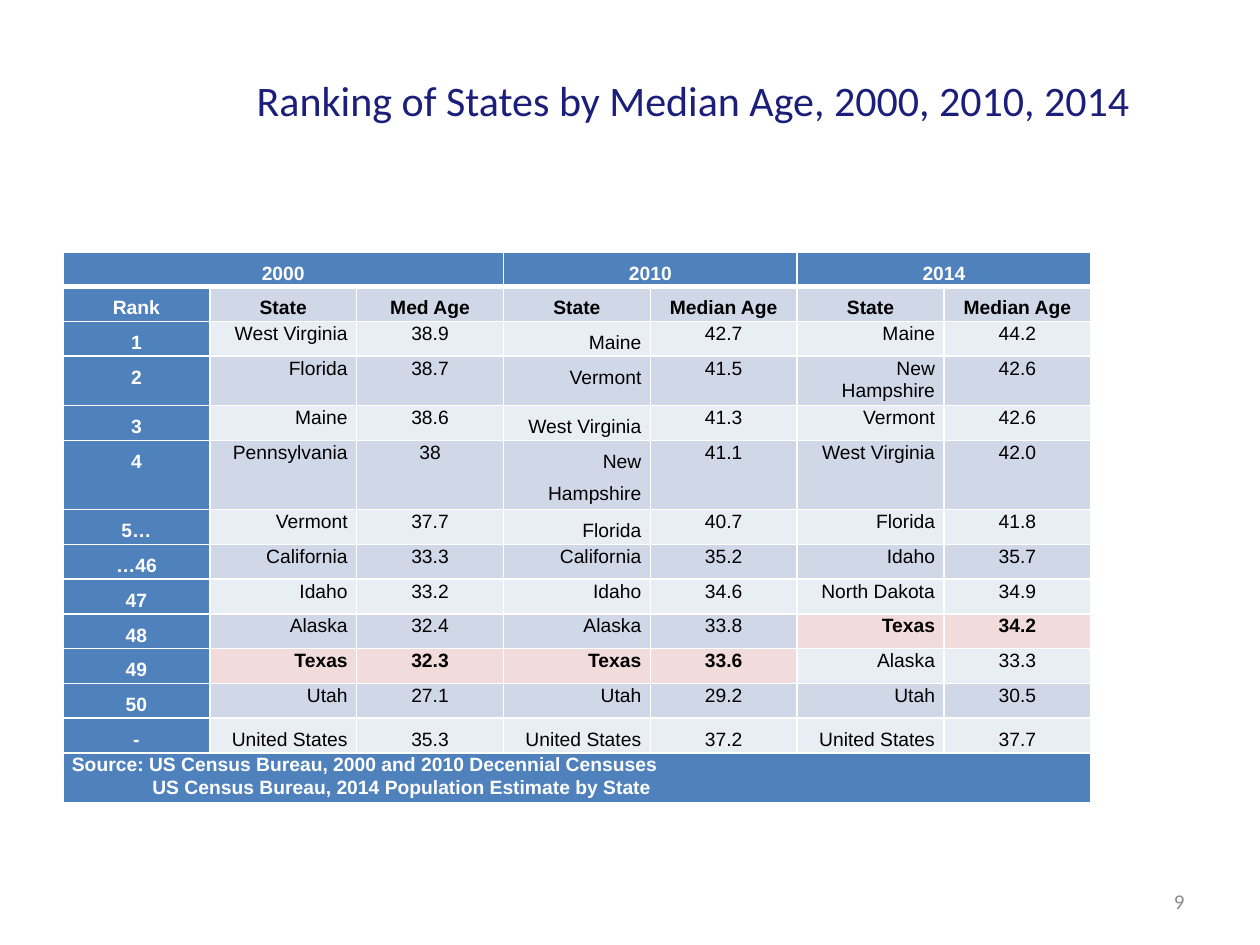
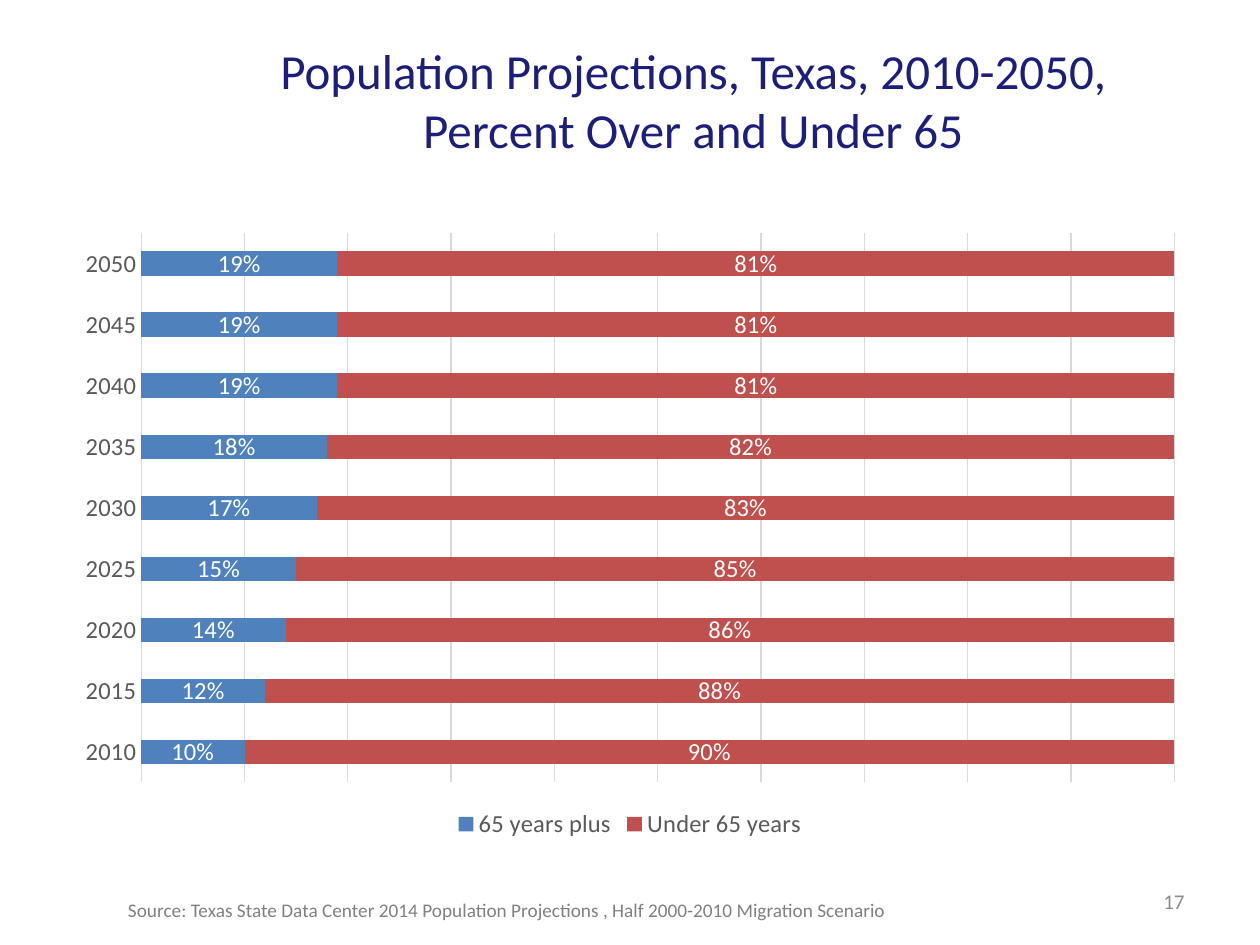
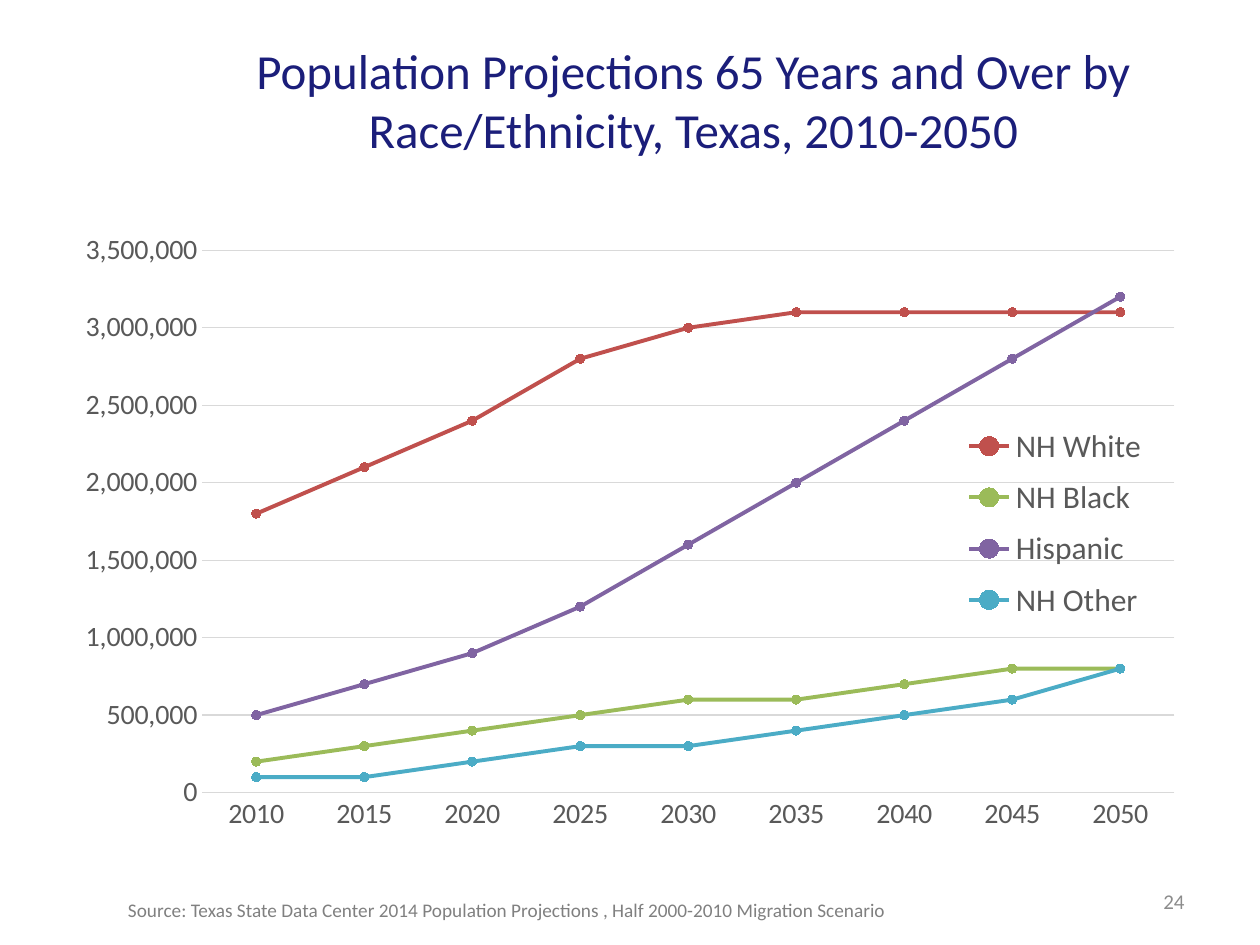
from dataclasses import dataclass

from pptx import Presentation
from pptx.chart.data import CategoryChartData
from pptx.dml.color import RGBColor
from pptx.enum.chart import (XL_CHART_TYPE, XL_LEGEND_POSITION, XL_MARKER_STYLE,
                             XL_TICK_MARK)
from pptx.enum.text import MSO_ANCHOR, PP_ALIGN
from pptx.oxml import parse_xml
from pptx.oxml.ns import nsdecls, qn
from pptx.util import Cm, Pt


@dataclass(frozen=True)
class Theme:
    heading_font: str = "Calibri"
    table_font: str = "Arial"
    title: str = "1B1E7A"
    page_number: str = "8C8C8C"
    source: str = "808080"
    axis_text: str = "595959"
    grid: str = "D9D9D9"
    white: str = "FFFFFF"
    black: str = "000000"
    blue: str = "4F81BD"
    red: str = "C0504D"
    green: str = "9BBB59"
    purple: str = "8064A2"
    aqua: str = "4BACC6"
    band_dark: str = "D0D8E8"
    band_light: str = "E9EDF4"
    texas: str = "F2DCDB"
    title_size: int = 28
    table_title_size: int = 24
    number_size: int = 12
    small_size: int = 11
    bar_size: int = 14
    line_size: int = 16
    legend_size: int = 18


theme = Theme()


def style_font(font, size, color, name=theme.heading_font, bold=False):
    font.name = name
    font.size = Pt(size)
    font.bold = bold
    font.color.rgb = RGBColor.from_string(color)


def add_text(slide, text, box, size, color, align=PP_ALIGN.LEFT, anchor=MSO_ANCHOR.TOP):
    """Add a one-paragraph text box; box is left, top, width, height in cm."""
    text_frame = slide.shapes.add_textbox(*map(Cm, box)).text_frame
    text_frame.word_wrap = True
    text_frame.vertical_anchor = anchor
    text_frame.text = text
    paragraph = text_frame.paragraphs[0]
    paragraph.alignment = align
    for run in paragraph.runs:
        style_font(run.font, size, color)


presentation = Presentation()
presentation.slide_width = Cm(25.4)
presentation.slide_height = Cm(19.05)

# Titles, page numbers and sources
projection_source = ("Source: Texas State Data Center 2014 Population Projections , "
                     "Half 2000-2010 Migration Scenario")
pages = [
    ("Ranking of States by Median Age, 2000, 2010, 2014", theme.table_title_size, "9", None),
    ("Population Projections, Texas, 2010-2050,\vPercent Over and Under 65",
     theme.title_size, "17", projection_source),
    ("Population Projections 65 Years and Over by Race/Ethnicity, Texas, 2010-2050",
     theme.title_size, "24", projection_source),
]
slides = []
for title, title_size, number, source in pages:
    slide = presentation.slides.add_slide(presentation.slide_layouts[6])
    add_text(slide, title, (4.45, 0.64, 19.05, 2.74), title_size, theme.title,
             PP_ALIGN.CENTER, MSO_ANCHOR.MIDDLE)
    add_text(slide, number, (18.2, 17.66, 5.93, 1.01), theme.number_size,
             theme.page_number, PP_ALIGN.RIGHT, MSO_ANCHOR.MIDDLE)
    if source:
        add_text(slide, source, (2.33, 17.99, 22, 0.73), theme.small_size, theme.source)
    slides.append(slide)
ranking_slide, share_slide, ethnicity_slide = slides

# Ranking table
ranking = [
    ("2000", "", "", "2010", "", "2014", ""),
    ("Rank", "State", "Med Age", "State", "Median Age", "State", "Median Age"),
    ("1", "West Virginia", "38.9", "Maine", "42.7", "Maine", "44.2"),
    ("2", "Florida", "38.7", "Vermont", "41.5", "New Hampshire", "42.6"),
    ("3", "Maine", "38.6", "West Virginia", "41.3", "Vermont", "42.6"),
    ("4", "Pennsylvania", "38", "New Hampshire", "41.1", "West Virginia", "42.0"),
    ("5…", "Vermont", "37.7", "Florida", "40.7", "Florida", "41.8"),
    ("…46", "California", "33.3", "California", "35.2", "Idaho", "35.7"),
    ("47", "Idaho", "33.2", "Idaho", "34.6", "North Dakota", "34.9"),
    ("48", "Alaska", "32.4", "Alaska", "33.8", "Texas", "34.2"),
    ("49", "Texas", "32.3", "Texas", "33.6", "Alaska", "33.3"),
    ("50", "Utah", "27.1", "Utah", "29.2", "Utah", "30.5"),
    ("-", "United States", "35.3", "United States", "37.2", "United States", "37.7"),
    ("Source: US Census Bureau, 2000 and 2010 Decennial Censuses\n"
     "US Census Bureau, 2014 Population Estimate by State", "", "", "", "", "", ""),
]
source_row = len(ranking) - 1
us_row = source_row - 1
tall_rows = {3: 0.95, 5: 1.29, source_row: 0.95}
table = ranking_slide.shapes.add_table(
    len(ranking), 7, Cm(1.27), Cm(5.08), Cm(20.75), Cm(10.44)).table
table.first_row = False
table.horz_banding = False
for column in table.columns:
    column.width = Cm(2.96)
for row_index, row in enumerate(table.rows):
    row.height = Cm(tall_rows.get(row_index, 0.67))
for row_index, first, last in [(0, 0, 2), (0, 3, 4), (0, 5, 6), (source_row, 0, 6)]:
    table.cell(row_index, first).merge(table.cell(row_index, last))

for row_index, values in enumerate(ranking):
    for column_index, value in enumerate(values):
        cell = table.cell(row_index, column_index)
        cell.margin_left = cell.margin_right = Cm(0.18)
        cell.margin_top = cell.margin_bottom = 0
        thick_side = {0: "lnB", 1: "lnT"}.get(row_index)
        for side in ("lnL", "lnR", "lnT", "lnB"):
            width = Pt(3 if side == thick_side else 1)
            cell._tc.get_or_add_tcPr().append(parse_xml(
                f'<a:{side} {nsdecls("a")} w="{width}"><a:solidFill>'
                f'<a:srgbClr val="{theme.white}"/></a:solidFill></a:{side}>'))

        is_blue = row_index in (0, source_row) or column_index == 0
        is_state = column_index % 2 == 1
        is_texas = not is_blue and "Texas" in (value, values[column_index - 1])
        if is_blue:
            fill = theme.blue
        elif is_texas:
            fill = theme.texas
        else:
            fill = theme.band_dark if row_index % 2 else theme.band_light
        cell.fill.solid()
        cell.fill.fore_color.rgb = RGBColor.from_string(fill)
        if not value:
            continue

        is_loose = (row_index in (0, 1, us_row) or column_index == 0
                    or (column_index == 3 and row_index <= 6))
        cell.text_frame.text = value
        for paragraph in cell.text_frame.paragraphs:
            paragraph.line_spacing = 1.5 if is_loose and row_index != source_row else 1.07
            if row_index == source_row:
                paragraph.alignment = PP_ALIGN.LEFT
            elif is_state and row_index > 1:
                paragraph.alignment = PP_ALIGN.RIGHT
            else:
                paragraph.alignment = PP_ALIGN.CENTER
            style_font(paragraph.runs[0].font, theme.small_size,
                       theme.white if is_blue else theme.black, theme.table_font,
                       is_blue or is_texas or row_index == 1)
second_source = table.cell(source_row, 0).text_frame.paragraphs[1]
second_source._p.get_or_add_pPr().set("marL", str(Cm(1.62)))

# Projection charts
years = [str(year) for year in range(2010, 2051, 5)]
over_65 = [0.1, 0.12, 0.14, 0.15, 0.17, 0.18, 0.19, 0.19, 0.19]
age_series = [
    ("65 years plus", over_65[::-1], theme.blue),
    ("Under 65 years", [round(1 - share, 2) for share in reversed(over_65)], theme.red),
]
ethnicity_series = [
    ("NH White", [1800000, 2100000, 2400000, 2800000, 3000000, 3100000, 3100000, 3100000,
                  3100000], theme.red),
    ("NH Black", [200000, 300000, 400000, 500000, 600000, 600000, 700000, 800000, 800000],
     theme.green),
    ("Hispanic", [500000, 700000, 900000, 1200000, 1600000, 2000000, 2400000, 2800000,
                  3200000], theme.purple),
    ("NH Other", [100000, 100000, 200000, 300000, 300000, 400000, 500000, 600000, 800000],
     theme.aqua),
]
charts = []
for slide, chart_type, categories, series_list, size in [
    (share_slide, XL_CHART_TYPE.BAR_STACKED_100, years[::-1], age_series, theme.bar_size),
    (ethnicity_slide, XL_CHART_TYPE.LINE_MARKERS, years, ethnicity_series, theme.line_size),
]:
    chart_data = CategoryChartData()
    chart_data.categories = categories
    for name, values, _ in series_list:
        chart_data.add_series(name, values)
    chart = slide.shapes.add_chart(
        chart_type, Cm(1.27), Cm(4.45), Cm(22.86), Cm(12.57), chart_data).chart
    chart.has_title = False
    style_font(chart.font, size, theme.black)
    chart.plots[0].vary_by_categories = False
    for axis in (chart.category_axis, chart.value_axis):
        axis.major_tick_mark = XL_TICK_MARK.NONE
        axis.minor_tick_mark = XL_TICK_MARK.NONE
        style_font(axis.tick_labels.font, size, theme.axis_text)
    chart.value_axis.has_major_gridlines = True
    for line in (chart.category_axis.format.line, chart.value_axis.major_gridlines.format.line):
        line.color.rgb = RGBColor.from_string(theme.grid)
        line.width = Pt(0.75)
    chart.value_axis.format.line.fill.background()
    chart.has_legend = True
    charts.append(chart)
share_chart, ethnicity_chart = charts

# Share of people over and under 65
share_chart.category_axis.reverse_order = True
share_chart.value_axis.visible = False
share_chart.legend.position = XL_LEGEND_POSITION.BOTTOM
share_chart.legend.include_in_layout = False
style_font(share_chart.legend.font, theme.bar_size, theme.axis_text)
share_chart.plots[0].gap_width = 150
share_chart.plots[0].overlap = 100
for series, (_, _, color) in zip(share_chart.plots[0].series, age_series):
    series.format.fill.solid()
    series.format.fill.fore_color.rgb = RGBColor.from_string(color)
    labels = series.data_labels
    labels.show_value = True
    labels.number_format = "0%"
    labels.number_format_is_linked = False
    style_font(labels.font, theme.bar_size, theme.white)

# People over 65 by race and ethnicity
value_axis = ethnicity_chart.value_axis
value_axis.minimum_scale = 0
value_axis.maximum_scale = 3500000
value_axis.major_unit = 500000
value_axis.tick_labels.number_format = "#,##0"
value_axis.tick_labels.number_format_is_linked = False
for series, (_, _, color) in zip(ethnicity_chart.plots[0].series, ethnicity_series):
    series.smooth = False
    series.format.line.color.rgb = RGBColor.from_string(color)
    series.format.line.width = Pt(2.25)
    series.marker.style = XL_MARKER_STYLE.CIRCLE
    series.marker.size = 5
    series.marker.format.fill.solid()
    series.marker.format.fill.fore_color.rgb = RGBColor.from_string(color)
    series.marker.format.line.color.rgb = RGBColor.from_string(color)
legend = ethnicity_chart.legend
legend.position = XL_LEGEND_POSITION.CORNER
legend.include_in_layout = True
style_font(legend.font, theme.legend_size, theme.axis_text)
legend_element = legend._element
for default_layout in legend_element.findall(qn("c:layout")):
    legend_element.remove(default_layout)
legend_layout = parse_xml(
    f'<c:layout {nsdecls("c")}><c:manualLayout><c:xMode val="edge"/><c:yMode val="edge"/>'
    '<c:x val="0.79"/><c:y val="0.31"/><c:w val="0.17"/><c:h val="0.35"/>'
    '</c:manualLayout></c:layout>')
legend_element.find(qn("c:legendPos")).addnext(legend_layout)

presentation.save("out.pptx")
